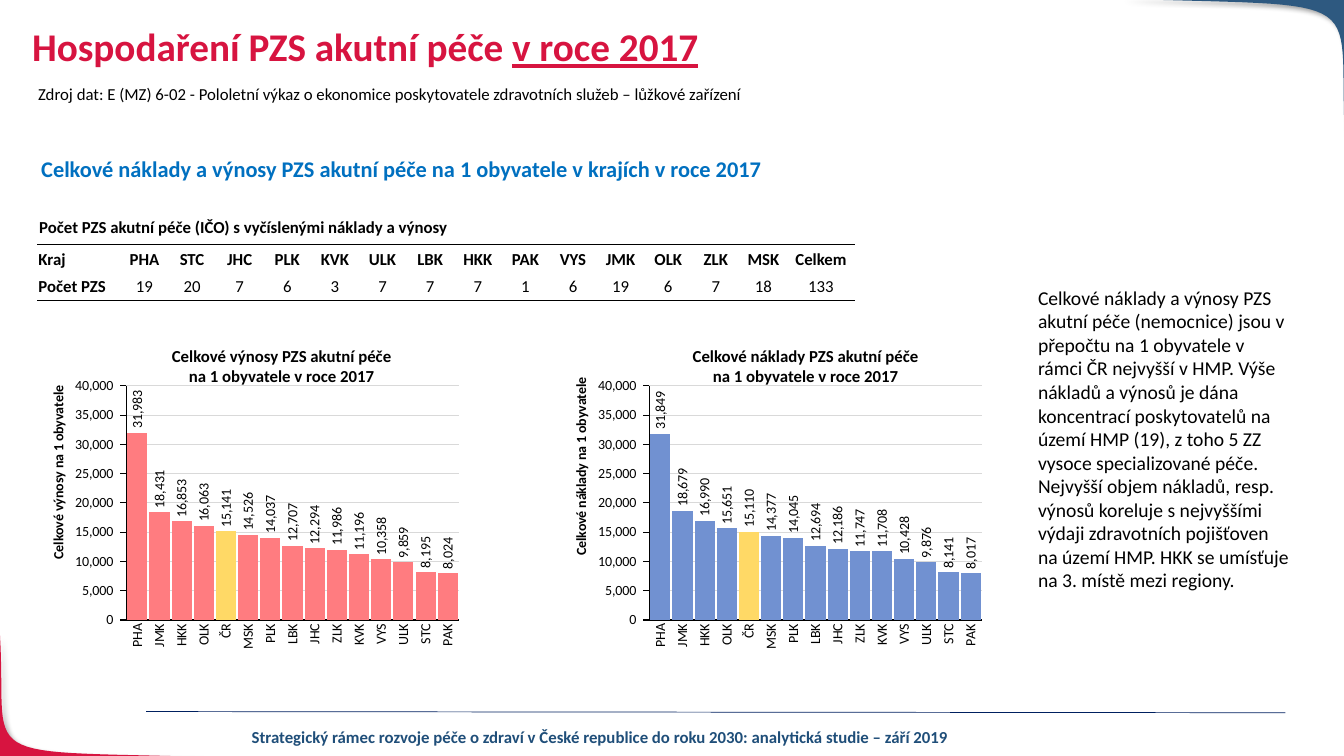
import pptx
import pptx.chart.data
import pptx.dml.color
import pptx.enum.chart
import pptx.enum.shapes
import pptx.enum.text
import pptx.oxml
import pptx.oxml.ns
import pptx.util

Cm = pptx.util.Cm
Pt = pptx.util.Pt
RGBColor = pptx.dml.color.RGBColor
Align = pptx.enum.text.PP_ALIGN
Anchor = pptx.enum.text.MSO_ANCHOR
Fit = pptx.enum.text.MSO_AUTO_SIZE
Tick = pptx.enum.chart.XL_TICK_MARK

BLACK = RGBColor(0, 0, 0)
WHITE = RGBColor(255, 255, 255)
RED = RGBColor(0xD7, 0x14, 0x40)
STEEL = RGBColor(0x2E, 0x59, 0x80)
NAVY = RGBColor(0x00, 0x20, 0x60)
DEEP = RGBColor(0x1F, 0x4E, 0x79)
BLUE = RGBColor(0x00, 0x70, 0xC0)
PINK = RGBColor(0xFF, 0x7C, 0x80)
SKY = RGBColor(0x71, 0x91, 0xD1)
GOLD = RGBColor(0xFF, 0xD9, 0x66)
GREY = RGBColor(0xD9, 0xD9, 0xD9)

NUMBER = "#,##0_ ;[Red]\\-#,##0\\ "
SPACE = pptx.oxml.ns.nsdecls("a")
REGIONS = "PHA STC JHC PLK KVK ULK LBK HKK PAK VYS JMK OLK ZLK MSK".split()
COUNTS = [19, 20, 7, 6, 3, 7, 7, 7, 1, 6, 19, 6, 7, 18]
ORDER = "PHA JMK HKK OLK ČR MSK PLK LBK JHC ZLK KVK VYS ULK STC PAK".split()
INCOME = [31983, 18431, 16853, 16063, 15141, 14526, 14037, 12707,
          12294, 11986, 11196, 10358, 9859, 8195, 8024]
COSTS = [31849, 18679, 16990, 15651, 15110, 14377, 14045, 12694,
         12186, 11747, 11708, 10428, 9876, 8141, 8017]
REMARK = (
    "Celkové náklady a výnosy PZS akutní péče (nemocnice) jsou v přepočtu na "
    "1 obyvatele v rámci ČR nejvyšší v HMP. Výše nákladů a výnosů je dána "
    "koncentrací poskytovatelů na území HMP (19), z toho 5 ZZ vysoce "
    "specializované péče. Nejvyšší objem nákladů, resp. výnosů koreluje s "
    "nejvyššími výdaji zdravotních pojišťoven na území HMP. HKK se umísťuje "
    "na 3. místě mezi regiony.")


def style(font, size, color=BLACK, bold=False):
    """Set the look of a font."""
    font.name = "Calibri"
    font.size = Pt(size)
    font.bold = bold
    font.color.rgb = color


def add_text(slide, box, words, size, color=BLACK, bold=False,
             align=Align.LEFT, fit=Fit.SHAPE_TO_FIT_TEXT, wrap=True):
    """Add a text box and return its frame."""
    frame = slide.shapes.add_textbox(*map(Cm, box)).text_frame
    frame.word_wrap = wrap
    frame.auto_size = fit
    frame.text = words
    for para in frame.paragraphs:
        para.alignment = align
        for run in para.runs:
            style(run.font, size, color, bold)
    return frame


def add_corner(slide, start, bend, tip, color):
    """Add a curved corner patch with a soft shadow."""
    curve = [start, *bend, tip]
    points = []
    for step in range(1, 31):
        t = step / 30
        parts = ((1 - t) ** 3, 3 * t * (1 - t) ** 2, 3 * t * t * (1 - t), t ** 3)
        points.append(tuple(Cm(sum(k * p[i] for k, p in zip(parts, curve)))
                            for i in (0, 1)))
    points.append((Cm(tip[0]), Cm(start[1])))
    form = slide.shapes.build_freeform(Cm(start[0]), Cm(start[1]))
    form.add_line_segments(points, close=True)
    shape = form.convert_to_shape()
    shape.fill.solid()
    shape.fill.fore_color.rgb = color
    shape.line.fill.background()
    shape.element.spPr.append(pptx.oxml.parse_xml(
        f'<a:effectLst {SPACE}><a:outerShdw blurRad="50800" dist="38100" '
        'dir="2700000" algn="tl" rotWithShape="0"><a:srgbClr val="000000">'
        '<a:alpha val="40000"/></a:srgbClr></a:outerShdw></a:effectLst>'))


def add_rule(slide, ends, color):
    """Add a thin straight line."""
    kind = pptx.enum.shapes.MSO_CONNECTOR.STRAIGHT
    line = slide.shapes.add_connector(kind, *map(Cm, ends))
    line.line.color.rgb = color
    line.line.width = Pt(0.5)
    line.element.spPr.append(pptx.oxml.parse_xml(f"<a:effectLst {SPACE}/>"))


def set_edge(cell, ruled):
    """Draw one edge of a cell and clear the others."""
    props = cell._tc.get_or_add_tcPr()
    for side in "LRTB":
        fill = ('<a:solidFill><a:srgbClr val="000000"/></a:solidFill>'
                if side == ruled else "<a:noFill/>")
        props.append(pptx.oxml.parse_xml(
            f'<a:ln{side} {SPACE} w="9525">{fill}</a:ln{side}>'))


def add_grid(slide):
    """Add the table of provider counts by region."""
    rows = [["Kraj", *REGIONS, "Celkem"], ["Počet PZS", *COUNTS, sum(COUNTS)]]
    widths = [2.1] + [1.2] * len(REGIONS) + [1.7]
    box = map(Cm, (0.94, 6.17, sum(widths), 1.4))
    table = slide.shapes.add_table(2, len(widths), *box).table
    for col, width in zip(table.columns, widths):
        col.width = Cm(width)
    for r, row in enumerate(rows):
        for c, value in enumerate(row):
            cell = table.cell(r, c)
            set_edge(cell, "TB"[r])
            cell.fill.solid()
            cell.fill.fore_color.rgb = WHITE
            cell.margin_left = cell.margin_right = cell.margin_top = Cm(0.03)
            cell.margin_bottom = 0
            cell.vertical_anchor = Anchor.MIDDLE
            cell.text = str(value)
            para = cell.text_frame.paragraphs[0]
            para.alignment = Align.CENTER if c else Align.LEFT
            style(para.runs[0].font, 12, bold=r == 0 or c == 0)


def place(node, index, **spots):
    """Give a chart part a manual layout."""
    for old in node.findall(pptx.oxml.ns.qn("c:layout")):
        node.remove(old)
    inner = '<c:layoutTarget val="inner"/>' if "w" in spots else ""
    modes = '<c:xMode val="edge"/><c:yMode val="edge"/>'
    sizes = "".join(f'<c:{k} val="{v}"/>' for k, v in spots.items())
    node.insert(index, pptx.oxml.parse_xml(
        f'<c:layout {pptx.oxml.ns.nsdecls("c")}><c:manualLayout>'
        f"{inner}{modes}{sizes}</c:manualLayout></c:layout>"))


def add_bars(slide, left, values, color, label, top):
    """Add a column chart with the national bar in gold."""
    data = pptx.chart.data.CategoryChartData()
    data.categories = ORDER
    data.add_series("Series 1", values)
    kind = pptx.enum.chart.XL_CHART_TYPE.COLUMN_CLUSTERED
    box = map(Cm, (left, 9.37, 11.18, 7.11))
    chart = slide.shapes.add_chart(kind, *box, data).chart
    chart.has_legend = chart.has_title = False
    style(chart.font, 10)
    plot = chart.plots[0]
    plot.gap_width = 10
    plot.vary_by_categories = False
    bars = plot.series[0]
    for fill, tint in ((bars.format.fill, color),
                       (bars.points[ORDER.index("ČR")].format.fill, GOLD)):
        fill.solid()
        fill.fore_color.rgb = tint
    marks = bars.data_labels
    marks.show_value = True
    marks.position = pptx.enum.chart.XL_LABEL_POSITION.OUTSIDE_END
    cats, scale = chart.category_axis, chart.value_axis
    cats.major_tick_mark = Tick.NONE
    scale.major_tick_mark = Tick.OUTSIDE
    scale.minimum_scale, scale.maximum_scale = 0, 40000
    scale.major_unit = 5000
    for axis in (cats, scale):
        style(axis.tick_labels.font, 10)
        axis.format.line.color.rgb = BLACK
        axis.format.line.width = Pt(0.75)
    for part in (marks, scale.tick_labels):
        part.number_format = NUMBER
        part.number_format_is_linked = False
    style(marks.font, 10)
    grid = scale.major_gridlines.format.line
    grid.color.rgb = GREY
    grid.width = Pt(0.75)
    title = scale.axis_title
    title.text_frame.text = label
    style(title.text_frame.paragraphs[0].runs[0].font, 10, bold=True)
    root = chart.element
    for query in ("//c:dLbls/c:txPr/a:bodyPr", "//c:catAx/c:txPr/a:bodyPr",
                  "//c:valAx/c:title//a:bodyPr"):
        for body in root.xpath(query):
            body.set("rot", "-5400000")
            body.set("vert", "horz")
    place(root.xpath("//c:plotArea")[0], 0, x=0.23, y=0.05, w=0.75, h=0.83)
    place(root.xpath("//c:valAx/c:title")[0], 1, x=0.05, y=top)


def main():
    """Build the slide and save it."""
    deck = pptx.Presentation()
    deck.slide_width, deck.slide_height = Cm(33.87), Cm(19.05)
    slide = deck.slides.add_slide(deck.slide_layouts[6])
    add_corner(slide, (5.41, 19.08), [(-0.86, 18.9), (0.2, 19.28)], (0, 16), RED)
    add_corner(slide, (28.22, -0.03), [(34.8, 0.18), (33.68, -0.25)],
               (33.9, 3.61), STEEL)
    add_rule(slide, (3.68, 17.93, 32.39, 17.96), NAVY)
    add_text(slide, (4.85, 18.19, 20.55, 0.77),
             "Strategický rámec rozvoje péče o zdraví v České republice do roku "
             "2030: analytická studie – září 2019", 12, DEEP, True, Align.CENTER)
    title = add_text(slide, (0.56, 0.58, 29.21, 1.75),
                     "Hospodaření PZS akutní péče ", 28, RED, True, fit=Fit.NONE)
    para = title.paragraphs[0]
    para.line_spacing = 0.9
    year = para.add_run()
    year.text = "v roce 2017"
    style(year.font, 28, RED, True)
    year.font.underline = True
    add_text(slide, (0.71, 1.98, 18.44, 0.77),
             "Zdroj dat: E (MZ) 6-02 - Pololetní výkaz o ekonomice poskytovatele "
             "zdravotních služeb – lůžkové zařízení", 12, wrap=False)
    add_text(slide, (0.79, 3.78, 19.23, 0.94),
             "Celkové náklady a výnosy PZS akutní péče na 1 obyvatele v krajích "
             "v roce 2017", 16, BLUE, True)
    remark = add_text(slide, (25.91, 6.32, 6.88, 9.47), REMARK, 14, fit=Fit.NONE)
    remark.vertical_anchor = Anchor.MIDDLE
    add_bars(slide, 0.61, INCOME, PINK, "Celkové výnosy na 1 obyvatele", 0.04)
    add_bars(slide, 13.79, COSTS, SKY, "Celkové náklady na 1 obyvatele", 0.01)
    add_grid(slide)
    add_text(slide, (0.74, 5.33, 10.87, 0.77),
             "Počet PZS akutní péče (IČO) s vyčíslenými náklady a výnosy",
             12, bold=True)
    for left, width, topic in ((2.82, 8.56, "výnosy"), (15.62, 9.37, "náklady")):
        add_text(slide, (left, 8.59, width, 1.28),
                 f"Celkové {topic} PZS akutní péče\nna 1 obyvatele v roce 2017",
                 12, bold=True, align=Align.CENTER)
    deck.save("out.pptx")


if __name__ == "__main__":
    main()
